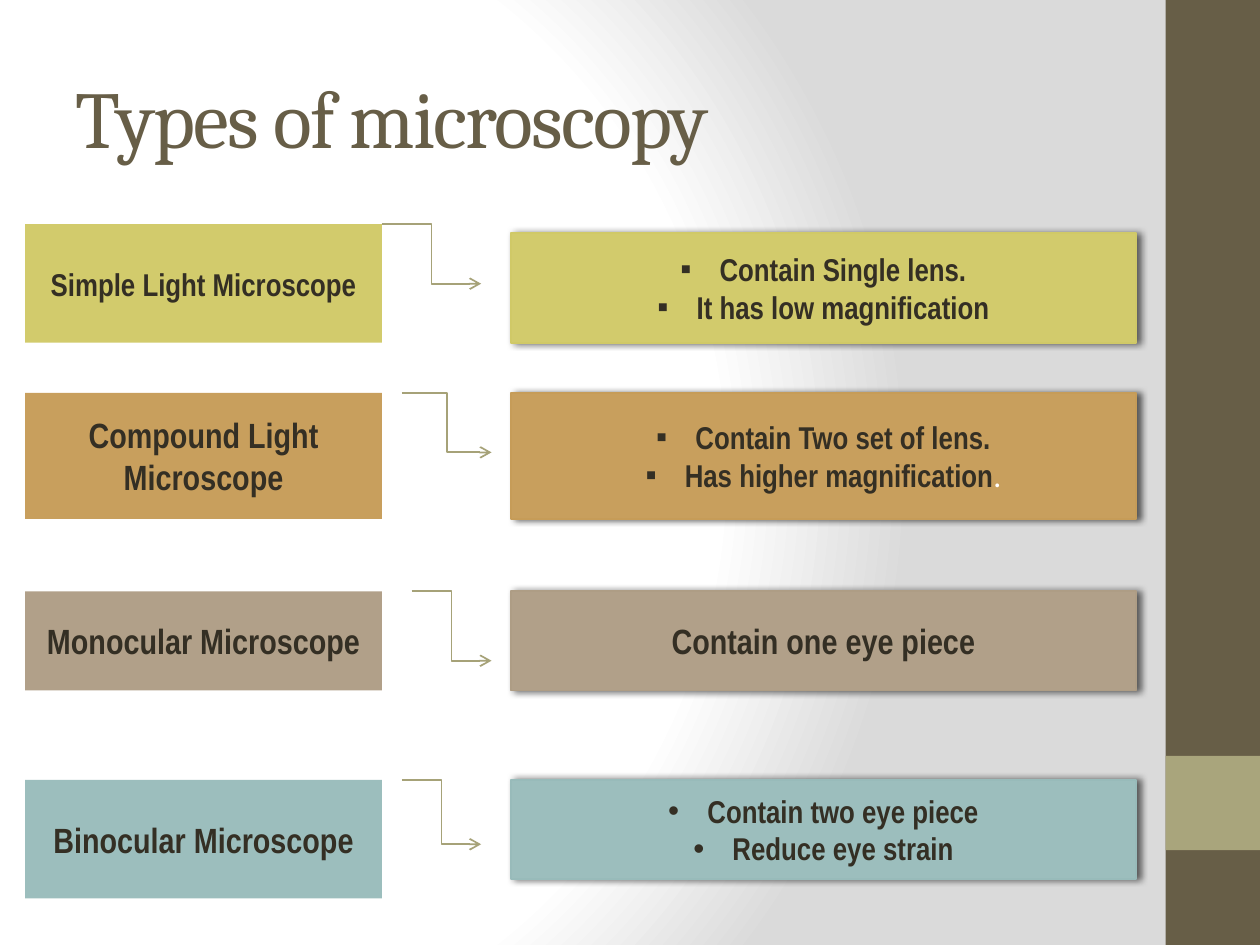
from dataclasses import dataclass

from lxml.etree import SubElement
from pptx import Presentation
from pptx.dml.color import RGBColor
from pptx.enum.shapes import MSO_CONNECTOR, MSO_SHAPE
from pptx.enum.text import MSO_ANCHOR, PP_ALIGN
from pptx.oxml import parse_xml
from pptx.oxml.ns import nsdecls, qn
from pptx.util import Cm, Pt


@dataclass(frozen=True)
class Theme:
    title: str = "675E47"
    band: str = "675E47"
    accent: str = "A9A57C"
    arrow: str = "A6A278"
    text: str = "342F24"
    light: str = "FFFFFF"
    shade: str = "DADADA"
    title_font: str = "Cambria"
    label_font: str = "Arial Narrow"
    plain_font: str = "Calibri"
    title_size: int = 46
    label_size: int = 20
    small_size: int = 18


@dataclass(frozen=True)
class MicroscopeRow:
    name: str
    facts: tuple
    fill: str
    outline: str
    top: float
    name_height: float
    fact_top: float
    fact_height: float
    arrow_left: float
    arrow_right: float
    arrow_drop: float
    name_size: int = Theme.label_size
    fact_size: int = Theme.small_size
    bullet: str = ""


class SlideBuilder:
    def __init__(self, slide, theme):
        self.slide = slide
        self.theme = theme

    def format_run(self, run, color, **values):
        for name, value in values.items():
            setattr(run.font, name, value)
        run.font.color.rgb = RGBColor.from_string(color)

    def background(self):
        """Radial gradient from light to shade."""
        self.slide.background.fill.gradient()
        gradient = self.slide.element.find(".//" + qn("a:gradFill"))
        for child in list(gradient):
            gradient.remove(child)
        stops = SubElement(gradient, qn("a:gsLst"))
        for position, color in ((0, self.theme.light), (75, self.theme.light), (100, self.theme.shade)):
            stop = SubElement(stops, qn("a:gs"), pos=str(position * 1000))
            SubElement(stop, qn("a:srgbClr"), val=color)
        circle = SubElement(gradient, qn("a:path"))
        circle.set("path", "circle")
        SubElement(circle, qn("a:fillToRect"), l="20000", t="50000", r="100000", b="50000")

    def title(self, text, left, top, width, height):
        shape = self.slide.shapes.title
        place = dict(left=left, top=top, width=width, height=height)
        for name, value in place.items():
            setattr(shape, name, Cm(value))
        frame = shape.text_frame
        frame.vertical_anchor = MSO_ANCHOR.MIDDLE
        paragraph = frame.paragraphs[0]
        paragraph.alignment = PP_ALIGN.LEFT
        run = paragraph.add_run()
        run.text = text
        self.format_run(run, self.theme.title, name=self.theme.title_font, size=Pt(self.theme.title_size))
        run._r.get_or_add_rPr().set("spc", "-100")

    def rectangle(self, left, top, width, height, fill, outline=None):
        shape = self.slide.shapes.add_shape(
            MSO_SHAPE.RECTANGLE, Cm(left), Cm(top), Cm(width), Cm(height))
        shape.shadow.inherit = False
        shape.fill.solid()
        shape.fill.fore_color.rgb = RGBColor.from_string(fill)
        if outline:
            shape.line.color.rgb = RGBColor.from_string(outline)
            shape.line.width = Pt(1)
        else:
            shape.line.fill.background()
        return shape

    def add_shadow(self, shape):
        effects = shape.element.spPr.find(qn("a:effectLst"))
        effects.append(parse_xml(
            f'<a:outerShdw {nsdecls("a")} blurRad="{Pt(4)}" dist="{Pt(2)}" dir="0" rotWithShape="0">'
            '<a:srgbClr val="000000"><a:alpha val="60000"/></a:srgbClr></a:outerShdw>'))

    def add_bullet(self, paragraph, character):
        properties = paragraph._p.get_or_add_pPr()
        properties.set("marL", str(Cm(0.79)))
        properties.set("indent", str(-Cm(0.79)))
        SubElement(properties, qn("a:buFont"), typeface="Arial")
        SubElement(properties, qn("a:buChar"), char=character)

    def label(self, shape, lines, size, bullet=""):
        """Each line is a string, or a (bold text, plain ending) pair."""
        theme = self.theme
        frame = shape.text_frame
        frame.word_wrap = True
        frame.vertical_anchor = MSO_ANCHOR.MIDDLE
        for index, line in enumerate(lines):
            paragraph = frame.add_paragraph() if index else frame.paragraphs[0]
            paragraph.alignment = PP_ALIGN.CENTER
            if bullet:
                self.add_bullet(paragraph, bullet)
            text, ending = (line, "") if isinstance(line, str) else line
            run = paragraph.add_run()
            run.text = text
            self.format_run(run, theme.text, name=theme.label_font, size=Pt(size), bold=True)
            if ending:
                run = paragraph.add_run()
                run.text = ending
                self.format_run(run, theme.light, name=theme.plain_font, size=Pt(size), bold=False)

    def elbow_arrow(self, left, top, right, bottom):
        connector = self.slide.shapes.add_connector(
            MSO_CONNECTOR.ELBOW, Cm(left), Cm(top), Cm(right), Cm(bottom))
        connector.line.color.rgb = RGBColor.from_string(self.theme.arrow)
        connector.line.width = Pt(1)
        properties = connector._element.spPr
        SubElement(properties.find(qn("a:ln")), qn("a:tailEnd"), type="arrow")
        SubElement(properties, qn("a:effectLst"))


ROWS = (
    MicroscopeRow("Simple Light Microscope", ("Contain Single lens.", "It has low magnification"),
                  "D2CB6C", "D0C967", 4.52, 2.39, 4.7, 2.21, 7.7, 9.7, 1.2,
                  name_size=Theme.small_size, bullet="▪"),
    MicroscopeRow("Compound Light Microscope",
                  ("Contain Two set of lens.", ("Has higher magnification", ".")),
                  "C89F5D", "C69C58", 7.92, 2.54, 7.92, 2.54, 8.1, 9.91, 1.2, bullet="▪"),
    MicroscopeRow("Monocular Microscope", ("Contain one eye piece",),
                  "B1A089", "AE9D85", 11.92, 2, 11.92, 2, 8.3, 9.91, 1.4,
                  fact_size=Theme.label_size),
    MicroscopeRow("Binocular Microscope", ("Contain two eye piece", "Reduce eye strain"),
                  "9CBEBD", "98BBBA", 15.72, 2.39, 15.72, 2, 8.1, 9.7, 1.3, bullet="•"),
)


def main():
    presentation = Presentation()
    presentation.slide_width, presentation.slide_height = Cm(25.4), Cm(19.05)
    slide = presentation.slides.add_slide(presentation.slide_layouts[5])
    theme = Theme()
    builder = SlideBuilder(slide, theme)

    # Background, side band and title
    builder.background()
    builder.rectangle(23.5, 0, 1.9, 19.05, theme.band)
    builder.rectangle(23.5, 15.24, 1.9, 1.9, theme.accent)
    builder.title("Types of microscopy", 1.27, 0.76, 21.16, 3.18)

    # One row per microscope: name, arrow, facts
    for row in ROWS:
        name_box = builder.rectangle(0.51, row.top, 7.19, row.name_height, row.fill)
        builder.label(name_box, (row.name,), row.name_size)
        builder.elbow_arrow(row.arrow_left, row.top, row.arrow_right, row.top + row.arrow_drop)
        fact_box = builder.rectangle(10.3, row.fact_top, 12.6, row.fact_height, row.fill, row.outline)
        builder.add_shadow(fact_box)
        builder.label(fact_box, row.facts, row.fact_size, row.bullet)

    presentation.save("out.pptx")


if __name__ == "__main__":
    main()
